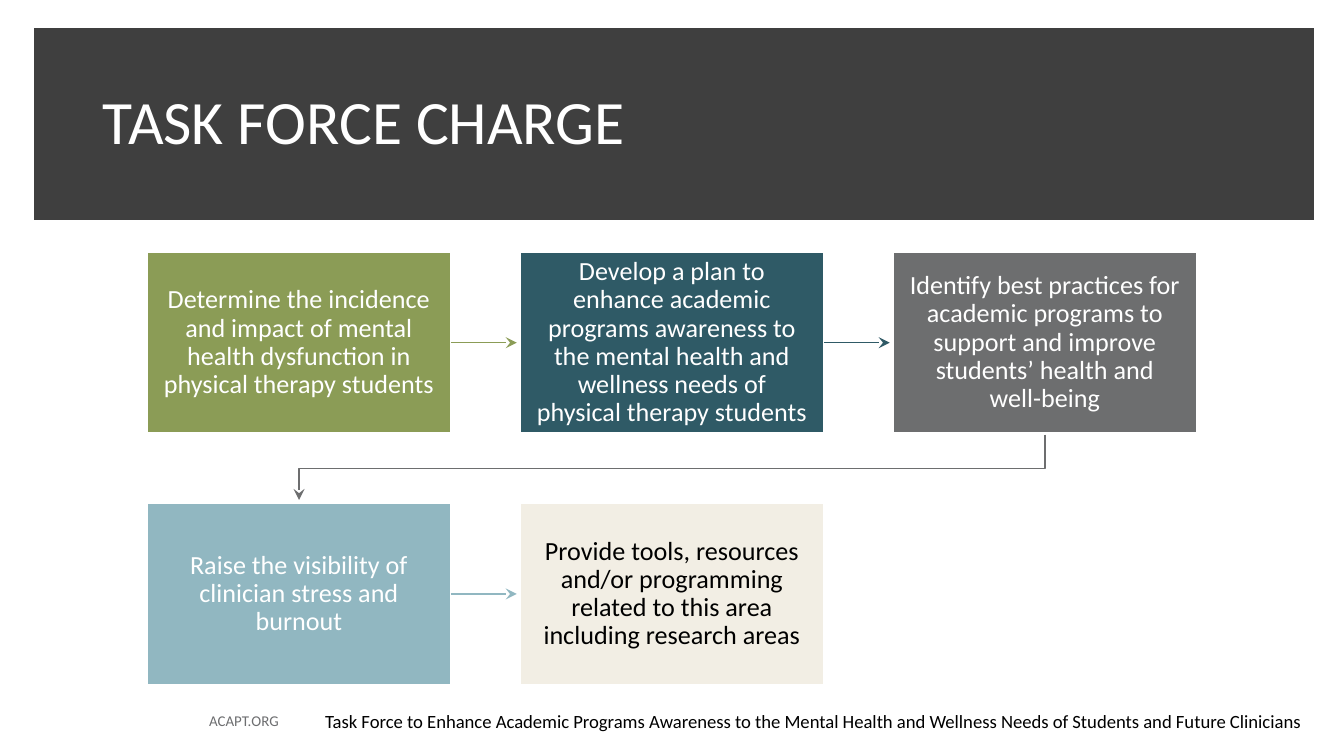
from lxml import etree
from pptx import Presentation
from pptx.dml.color import RGBColor
from pptx.enum.shapes import MSO_CONNECTOR, MSO_SHAPE
from pptx.enum.text import MSO_ANCHOR, PP_ALIGN
from pptx.oxml.ns import qn
from pptx.util import Pt

RECT, STRAIGHT = MSO_SHAPE.RECTANGLE, MSO_CONNECTOR.STRAIGHT
MIDDLE, TOP = MSO_ANCHOR.MIDDLE, MSO_ANCHOR.TOP
LEFT, CENTER, RIGHT = PP_ALIGN.LEFT, PP_ALIGN.CENTER, PP_ALIGN.RIGHT

PX = 4572  # EMU per px, 200 px to the inch
THEME = {
    "font": "Calibri",
    "title_size": 33, "step_size": 14, "task_force_size": 10, "site_size": 8,
    "banner": "3F3F3F", "white": "FFFFFF", "black": "000000", "site": "6D6E70",
    "green": "8B9C56", "teal": "2F5A66", "gray": "6D6E6F",
    "blue": "91B7C1", "cream": "F2EEE4",
}


def write(shape, text, size, ink, align=LEFT, anchor=MIDDLE, inset=(15, 8), spacing=1.0):
    frame = shape.text_frame
    across, down = (value * PX for value in inset)
    frame_format = {
        "word_wrap": True, "vertical_anchor": anchor,
        "margin_left": across, "margin_right": across,
        "margin_top": down, "margin_bottom": down,
    }
    for name, value in frame_format.items():
        setattr(frame, name, value)
    paragraph = frame.paragraphs[0]
    paragraph.text = text
    paragraph.alignment = align
    paragraph.line_spacing = spacing
    for name, value in {"name": THEME["font"], "size": Pt(THEME[size])}.items():
        setattr(paragraph.font, name, value)
    paragraph.font.color.rgb = RGBColor.from_string(THEME[ink])


def add_block(box, fill, border, border_width):
    block = slide.shapes.add_shape(RECT, *(length * PX for length in box))
    block.shadow.inherit = False
    block.fill.solid()
    block.fill.fore_color.rgb = RGBColor.from_string(THEME[fill])
    block.line.color.rgb = RGBColor.from_string(THEME[border])
    block.line.width = Pt(border_width)
    etree.SubElement(block.line._get_or_add_ln(), qn("a:miter"), lim="800000")
    return block


prs = Presentation()
prs.slide_width, prs.slide_height = 2000 * PX, 1125 * PX
slide = prs.slides.add_slide(prs.slide_layouts[6])
shapes = slide.shapes

# Footer
site = shapes.add_textbox(284 * PX, 1043 * PX, 146 * PX, 60 * PX)
write(site, "ACAPT.ORG", "site_size", "site", align=RIGHT)
task_force = shapes.add_textbox(464 * PX, 1047 * PX, 1556 * PX, 54 * PX)
write(task_force, "Task Force to Enhance Academic Programs Awareness to the Mental Health "
      "and Wellness Needs of Students and Future Clinicians",
      "task_force_size", "black", anchor=TOP, inset=(20, 10))

# Title banner
add_block((64, 56, 1877, 258), "banner", "banner", 10)
title = shapes.add_textbox(138 * PX, 76 * PX, 1724 * PX, 218 * PX)
write(title, "TASK FORCE CHARGE", "title_size", "white", spacing=0.9)

# Charge steps: three to a row, each with an arrow to the next
STEP_W, STEP_H = 452, 270
GRID_X, GRID_Y, PITCH_X, PITCH_Y, COLUMNS = 219, 375, 555, 374, 3
ARROW_W = 98
steps = [
    ("Determine the incidence and impact of mental health dysfunction in "
     "physical therapy students", "green", "white"),
    ("Develop a plan to enhance academic programs awareness to the mental health "
     "and wellness needs of physical therapy students", "teal", "white"),
    ("Identify best practices for academic programs to support and improve "
     "students’ health and well-being", "gray", "white"),
    ("Raise the visibility of clinician stress and burnout", "blue", "white"),
    ("Provide tools, resources and/or programming related to this area "
     "including research areas", "cream", "black"),
]
for index, (charge, fill, ink) in enumerate(steps):
    row, column = divmod(index, COLUMNS)
    x, y = GRID_X + column * PITCH_X, GRID_Y + row * PITCH_Y
    step = add_block((x, y, STEP_W, STEP_H), fill, "white", 1)
    write(step, charge, "step_size", ink, align=CENTER, inset=(22, 23), spacing=0.9)

    if index == len(steps) - 1:
        continue
    if column < COLUMNS - 1:
        start, middle = x + STEP_W, y + STEP_H // 2
        arrow = shapes.add_connector(STRAIGHT, start * PX, middle * PX,
                                     (start + ARROW_W) * PX, middle * PX)
    else:
        # The last step of a row bends back to the first of the next
        start_x, end_x = x + STEP_W // 2, GRID_X + STEP_W // 2
        start_y, end_y = y + STEP_H + 2, y + PITCH_Y - 5
        bend_y = y + (STEP_H + PITCH_Y) // 2
        outline = shapes.build_freeform(start_x, start_y, scale=PX)
        outline.add_line_segments([(start_x, bend_y), (end_x, bend_y), (end_x, end_y)],
                                  close=False)
        arrow = outline.convert_to_shape()
        arrow.fill.background()
    arrow.line.color.rgb = RGBColor.from_string(THEME[fill])
    arrow.line.width = Pt(0.75)
    etree.SubElement(arrow.line._get_or_add_ln(), qn("a:tailEnd"), type="stealth")
    etree.SubElement(arrow._element.spPr, qn("a:effectLst"))

prs.save("out.pptx")
